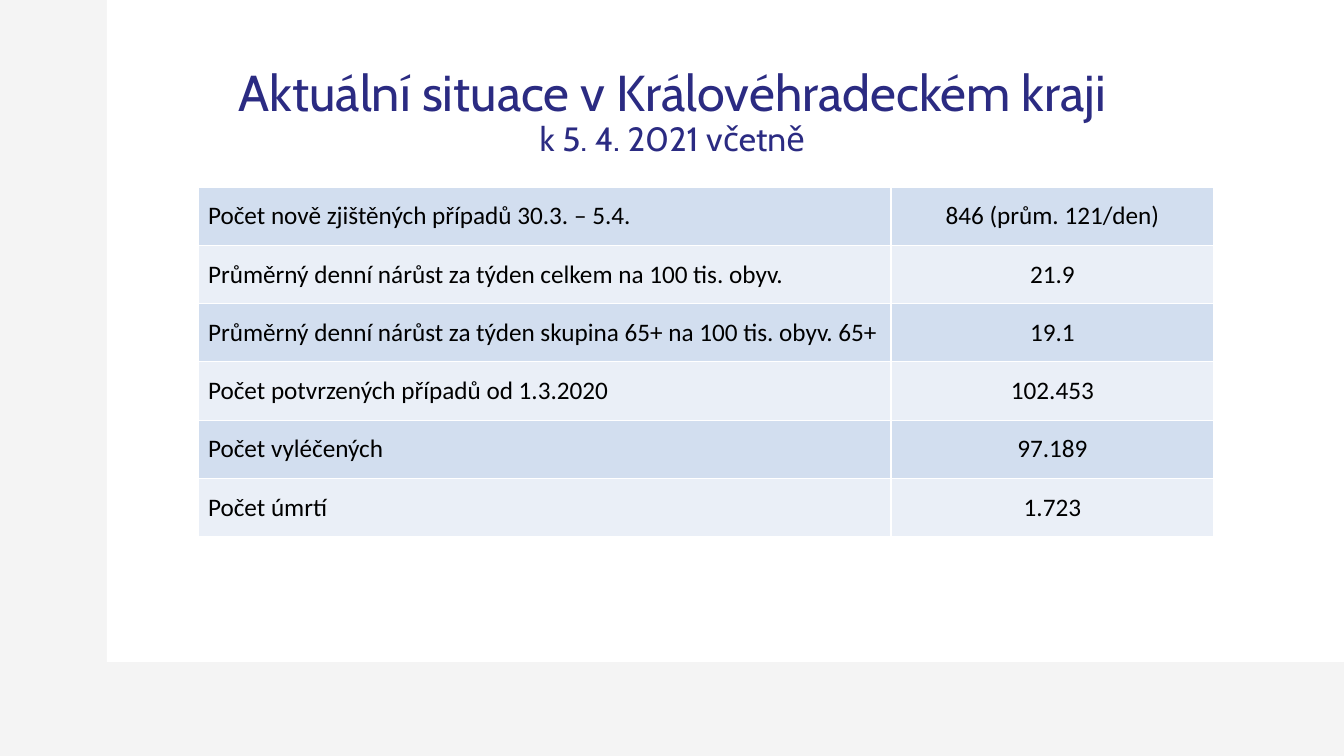
from typing import NamedTuple

from lxml import etree
from pptx import Presentation, util as u
from pptx.dml.color import RGBColor
from pptx.enum import shapes, text
from pptx.oxml.ns import qn

EMU_PER_PX = 914400 / 100.8
WHITE = "FFFFFF"
GREY = "F4F4F4"
NAVY = "2B2B82"
BLACK = "000000"
BANDS = ("D2DEEF", "EAEFF7")


class Box(NamedTuple):
    left: int
    top: int
    width: int
    height: int


class Indicator(NamedTuple):
    label: str
    value: str


PANEL = Box(107, 0, 1237, 662)
HEADING = Box(93, 40, 1159, 146)
OVERVIEW = Box(198, 187, 1016, 350)
LABEL_WIDTH = 693

INDICATORS = [
    Indicator("Počet nově zjištěných případů 30.3. – 5.4.", "846 (prům. 121/den)"),
    Indicator("Průměrný denní nárůst za týden celkem na 100 tis. obyv.", "21.9"),
    Indicator("Průměrný denní nárůst za týden skupina 65+ na 100 tis. obyv. 65+", "19.1"),
    Indicator("Počet potvrzených případů od 1.3.2020", "102.453"),
    Indicator("Počet vyléčených", "97.189"),
    Indicator("Počet úmrtí", "1.723"),
]


def px(length: int) -> u.Emu:
    return u.Emu(round(length * EMU_PER_PX))


def place(box: Box) -> list:
    return [px(length) for length in box]


def paint(fill, colour: str) -> None:
    fill.solid()
    fill.fore_color.rgb = RGBColor.from_string(colour)


def style(font, name: str, size: int, colour: str) -> None:
    font.name = name
    font.size = u.Pt(size)
    font.color.rgb = RGBColor.from_string(colour)


def add_borders(cell, colour: str) -> None:
    properties = cell._tc.get_or_add_tcPr()
    for side in ("lnL", "lnR", "lnT", "lnB"):
        border = etree.SubElement(properties, qn(f"a:{side}"), w=str(u.Pt(1)))
        solid = etree.SubElement(border, qn("a:solidFill"))
        etree.SubElement(solid, qn("a:srgbClr"), val=colour)


def fill_cell(cell, wording: str, band: str, align) -> None:
    add_borders(cell, WHITE)
    paint(cell.fill, band)
    cell.vertical_anchor = text.MSO_ANCHOR.MIDDLE
    cell.text_frame.text = wording
    paragraph = cell.text_frame.paragraphs[0]
    paragraph.alignment = align
    style(paragraph.runs[0].font, "Calibri", 18, BLACK)


def add_panel(slide) -> None:
    panel = slide.shapes.add_shape(shapes.MSO_SHAPE.RECTANGLE, *place(PANEL))
    panel.shadow.inherit = False
    paint(panel.fill, WHITE)
    panel.line.fill.background()
    tree = slide.shapes._spTree
    tree.remove(panel._element)
    tree.insert(2, panel._element)


def set_heading(slide) -> None:
    heading = slide.shapes.title
    heading.left, heading.top, heading.width, heading.height = place(HEADING)
    frame = heading.text_frame
    frame.text = "Aktuální situace v Královéhradeckém kraji\vk 5. 4. 2021 včetně"
    frame.word_wrap = True
    frame.auto_size = text.MSO_AUTO_SIZE.NONE
    frame.vertical_anchor = text.MSO_ANCHOR.MIDDLE
    paragraph = frame.paragraphs[0]
    paragraph.alignment = text.PP_ALIGN.CENTER
    paragraph.line_spacing = 0.9
    for run, size in zip(paragraph.runs, (36, 24)):
        style(run.font, "Cabin", size, NAVY)


def add_overview(slide) -> None:
    overview = slide.shapes.add_table(len(INDICATORS), 2, *place(OVERVIEW)).table
    overview.first_row = False
    overview.horz_banding = False
    overview.columns[0].width = px(LABEL_WIDTH)
    overview.columns[1].width = px(OVERVIEW.width - LABEL_WIDTH)
    for row, indicator in enumerate(INDICATORS):
        band = BANDS[row % 2]
        fill_cell(overview.cell(row, 0), indicator.label, band, text.PP_ALIGN.LEFT)
        fill_cell(overview.cell(row, 1), indicator.value, band, text.PP_ALIGN.CENTER)


def main() -> None:
    deck = Presentation()
    deck.slide_width, deck.slide_height = px(1344), px(756)
    slide = deck.slides.add_slide(deck.slide_layouts.get_by_name("Title Only"))
    paint(slide.background.fill, GREY)
    add_panel(slide)
    set_heading(slide)
    add_overview(slide)
    deck.save("out.pptx")


if __name__ == "__main__":
    main()
